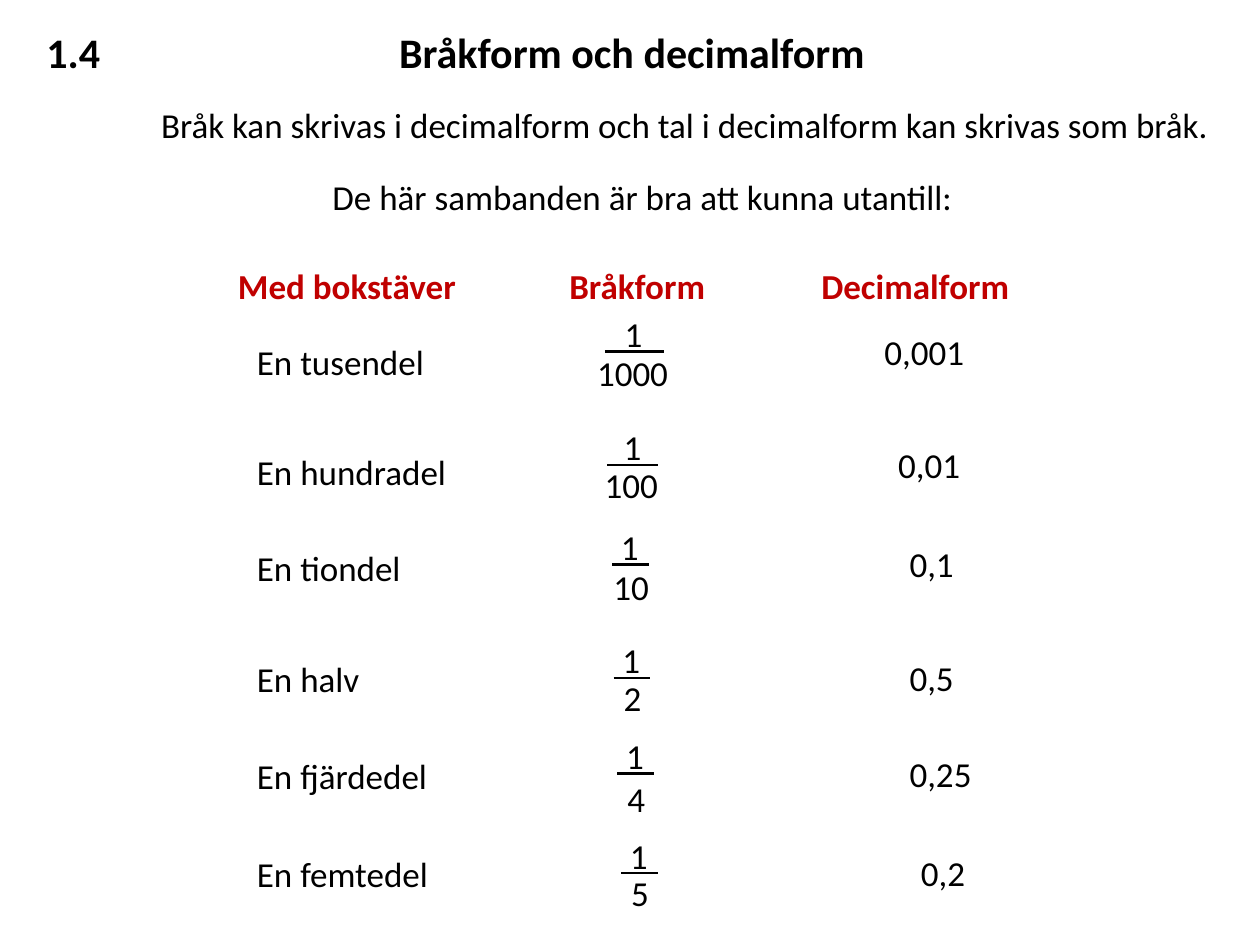
import dataclasses

import lxml.etree
import pptx
import pptx.dml.color
import pptx.enum.shapes
import pptx.enum.text
import pptx.oxml.ns
import pptx.util
from pptx.util import Inches

BLACK = pptx.dml.color.RGBColor(0x00, 0x00, 0x00)
RED = pptx.dml.color.RGBColor(0xC0, 0x00, 0x00)
FONT = "Calibri"
TEXT_HEIGHT = 0.44
WORD_LEFT = 1.94
NUMERATOR_RISE = 0.36
DECIMAL_RISE = 0.22


@dataclasses.dataclass
class Relation:
    word: str
    word_top: float
    denominator: str
    bar_left: float
    bar_top: float
    bar_width: float
    numerator_shift: float
    denominator_shift: float
    denominator_rise: float
    decimal: str
    decimal_left: float


RELATIONS = [
    Relation("En tusendel", 2.65, "1000", 4.80, 2.79, 0.47, 0.06, -0.16, 0.05, "0,001", 6.92),
    Relation("En hundradel", 3.53, "100", 4.82, 3.69, 0.40, 0.03, -0.12, 0.06, "0,01", 7.03),
    Relation("En tiondel", 4.29, "10", 4.86, 4.48, 0.29, -0.03, -0.09, 0.04, "0,1", 7.12),
    Relation("En halv", 5.17, "2", 4.87, 5.38, 0.29, -0.03, -0.02, 0.06, "0,5", 7.12),
    Relation("En fjärdedel", 5.94, "4", 4.90, 6.14, 0.29, -0.03, -0.02, 0.02, "0,25", 7.12),
    Relation("En femtedel", 6.72, "5", 4.93, 6.93, 0.29, -0.03, -0.02, 0.06, "0,2", 7.21),
]


def add_text(shapes, text, left, top, width, height=TEXT_HEIGHT,
             size=20, color=BLACK, bold=False, tab_stops=()):
    shape = shapes.add_textbox(Inches(left), Inches(top), Inches(width), Inches(height))
    frame = shape.text_frame
    frame.word_wrap = True
    frame.auto_size = pptx.enum.text.MSO_AUTO_SIZE.SHAPE_TO_FIT_TEXT
    paragraph = frame.paragraphs[0]
    run = paragraph.add_run()
    run.text = text
    run.font.name = FONT
    run.font.size = pptx.util.Pt(size)
    run.font.bold = bold
    run.font.color.rgb = color
    if tab_stops:
        set_tab_stops(paragraph, tab_stops)


def set_tab_stops(paragraph, positions):
    properties = paragraph._p.get_or_add_pPr()
    tab_list = lxml.etree.SubElement(properties, pptx.oxml.ns.qn("a:tabLst"))
    for position in positions:
        tab = lxml.etree.SubElement(tab_list, pptx.oxml.ns.qn("a:tab"))
        tab.set("pos", str(Inches(position)))
        tab.set("algn", "l")


def add_bar(shapes, left, top, width):
    bar = shapes.add_connector(
        pptx.enum.shapes.MSO_CONNECTOR.STRAIGHT,
        Inches(left), Inches(top), Inches(left + width), Inches(top))
    bar.line.color.rgb = BLACK
    bar.line.width = pptx.util.Pt(1.5)
    lxml.etree.SubElement(bar._element.spPr, pptx.oxml.ns.qn("a:effectLst"))


def add_fraction(shapes, relation):
    group = shapes.add_group_shape()
    left, top = relation.bar_left, relation.bar_top
    add_text(group.shapes, "1", left + relation.numerator_shift, top - NUMERATOR_RISE, 0.51)
    add_text(group.shapes, relation.denominator, left + relation.denominator_shift,
             top - relation.denominator_rise, 0.81)
    add_bar(group.shapes, left, top, relation.bar_width)


def add_relation(shapes, relation):
    add_text(shapes, relation.word, WORD_LEFT, relation.word_top, 1.82)
    add_fraction(shapes, relation)
    add_text(shapes, relation.decimal, relation.decimal_left,
             relation.bar_top - DECIMAL_RISE, 0.98)


def main():
    presentation = pptx.Presentation()
    presentation.slide_width = Inches(10)
    presentation.slide_height = Inches(7.5)
    slide = presentation.slides.add_slide(presentation.slide_layouts[6])
    shapes = slide.shapes

    add_text(shapes, "1.4\tBråkform och decimalform", 0.27, 0.16, 9.73, 0.5,
             size=24, bold=True, tab_stops=[2.8])
    add_text(shapes, "Bråk kan skrivas i decimalform och tal i decimalform kan skrivas som bråk.",
             1.18, 0.77, 8.54)
    add_text(shapes, "De här sambanden är bra att kunna utantill:", 2.54, 1.34, 5.34)
    add_text(shapes, "Med bokstäver\tBråkform\tDecimalform", 1.79, 2.05, 6.7,
             color=RED, bold=True, tab_stops=[2.63, 4.63])
    for relation in RELATIONS:
        add_relation(shapes, relation)

    presentation.save("out.pptx")


if __name__ == "__main__":
    main()
